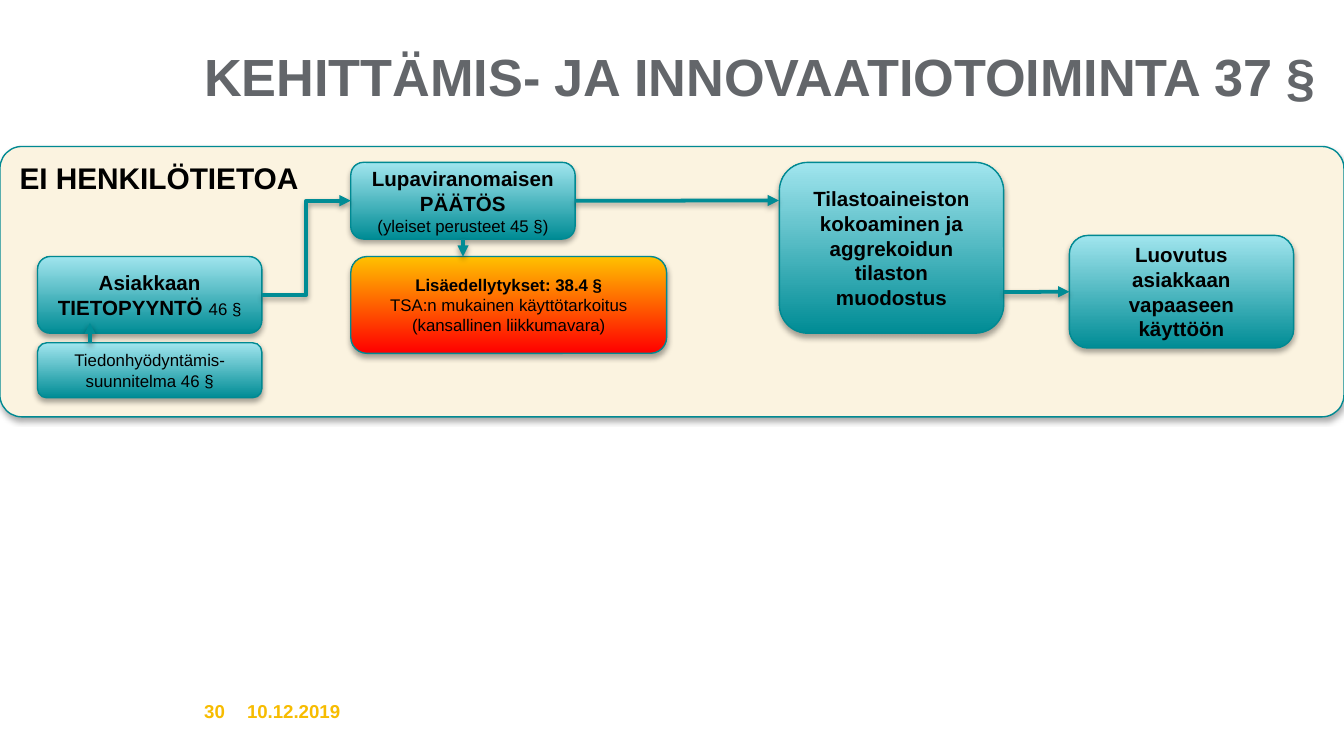
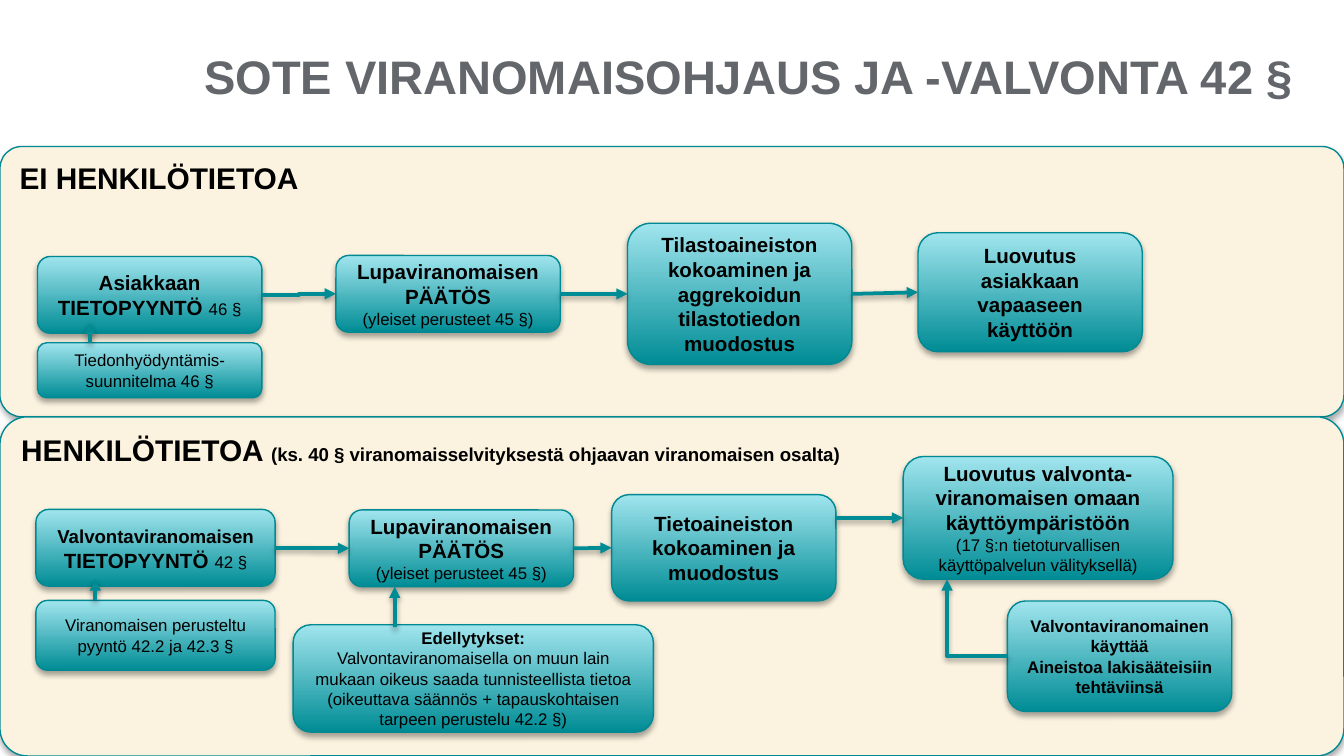
from lxml.etree import SubElement
from pptx import Presentation
from pptx.dml.color import RGBColor
from pptx.enum.shapes import MSO_CONNECTOR as LINK, MSO_SHAPE
from pptx.enum.text import MSO_ANCHOR as ANCHOR, MSO_AUTO_SIZE, PP_ALIGN as ALIGN
from pptx.oxml.ns import qn
from pptx.util import Cm, Pt

FONT = "Arial"
BLACK = RGBColor(0x00, 0x00, 0x00)
GREY = RGBColor(0x63, 0x66, 0x6A)
GOLD = RGBColor(0xF7, 0xBC, 0x00)
CREAM = RGBColor(0xFB, 0xF3, 0xE0)
BORDER = RGBColor(0x00, 0x89, 0x92)
TEAL = RGBColor(0x00, 0x8C, 0x95)
AQUA = RGBColor(0xA1, 0xE5, 0xEE)
RED = RGBColor(0xFF, 0x00, 0x00)
AMBER = RGBColor(0xFF, 0xC0, 0x00)

TOP, LEFT, BOTTOM, RIGHT = range(4)
WIDTH, HEIGHT = 25.4, 14.29
BOX_W, BOX_H = 4.24, 1.45
PANEL_TOP, PANEL_SPLIT = 2.77, 7.88


def strong(text, size=11):
    return [(text, size, True)]


def plain(text):
    return [(text, 9, False)]


OPEN_PANEL = (PANEL_TOP, PANEL_SPLIT, strong("EI HENKILÖTIETOA", 16))
PERSONAL_PANEL = (
    PANEL_SPLIT, HEIGHT,
    strong("HENKILÖTIETOA ", 16)
    + strong("(ks. 40 § viranomaisselvityksestä ohjaavan viranomaisen osalta)", 10),
)
DECISION = [strong("Lupaviranomaisen\nPÄÄTÖS"), plain("(yleiset perusteet 45 §)")]
RELEASE = [strong("Luovutus asiakkaan vapaaseen käyttöön")]
CUSTOMER = {
    "request": ((0.71, 4.85, BOX_W, BOX_H),
                [strong("Asiakkaan TIETOPYYNTÖ ") + plain("46 §")]),
    "plan": ((0.71, 6.48, BOX_W, 1.04),
             [plain("Tiedonhyödyntämis- suunnitelma 46 §")]),
}
PLAN_ARROW = ((1.7, 6.48), (1.7, 6.1), LINK.STRAIGHT)

SLIDES = [
    {
        "title": "KEHITTÄMIS- JA INNOVAATIOTOIMINTA 37 §",
        "title_size": 28,
        "footer": [("30", 3.86, 0.74), ("10.12.2019", 4.67, 3.1)],
        "panels": [OPEN_PANEL],
        "boxes": CUSTOMER | {
            "decision": ((6.63, 3.07, BOX_W, BOX_H), DECISION),
            "conditions": ((6.63, 4.85, 5.97, 1.83),
                           [strong("Lisäedellytykset: 38.4 §\n", 9)
                            + plain("TSA:n mukainen käyttötarkoitus (kansallinen liikkumavara)")]),
            "statistics": ((14.73, 3.07, BOX_W, 3.23),
                           [strong("Tilastoaineiston kokoaminen ja aggrekoidun tilaston muodostus")]),
            "release": ((20.21, 4.45, BOX_W, 2.13), RELEASE),
        },
        "arrows": [
            (("request", RIGHT), ("decision", LEFT), LINK.ELBOW),
            (("decision", RIGHT), (14.72, 3.79), LINK.STRAIGHT),
            (("decision", BOTTOM), (8.75, 4.85), LINK.STRAIGHT),
            ((18.97, 5.52), ("release", LEFT), LINK.STRAIGHT),
            PLAN_ARROW,
        ],
    },
    {
        "title": "SOTE VIRANOMAISOHJAUS JA -VALVONTA 42 §",
        "title_size": 25.2,
        "footer": [],
        "panels": [OPEN_PANEL, PERSONAL_PANEL],
        "boxes": CUSTOMER | {
            "decision": ((6.35, 4.83, BOX_W, BOX_H), DECISION),
            "statistics": ((11.86, 4.22, BOX_W, 2.67),
                           [strong("Tilastoaineiston kokoaminen ja aggrekoidun tilastotiedon muodostus")]),
            "release": ((17.35, 4.4, BOX_W, 2.25), RELEASE),
            "authority request": ((0.68, 9.63, 4.52, BOX_H),
                                  [strong("Valvontaviranomaisen", 10) + strong(" TIETOPYYNTÖ ")
                                   + plain("42 §")]),
            "grounds": ((0.68, 11.35, 4.52, 1.32),
                        [plain("Viranomaisen perusteltu pyyntö 42.2 ja 42.3 §")]),
            "authority decision": ((6.6, 9.64, BOX_W, BOX_H), DECISION),
            "requirements": ((5.54, 11.81, 6.81, 2.03),
                             [strong("Edellytykset:", 9),
                              plain("Valvontaviranomaisella on muun lain mukaan oikeus saada "
                                    "tunnisteellista tietoa (oikeuttava säännös + "
                                    "tapauskohtaisen tarpeen perustelu 42.2 §)")]),
            "collection": ((11.56, 9.35, BOX_W, 2.01),
                           [strong("Tietoaineiston kokoaminen ja muodostus")]),
            "handover": ((17.07, 8.63, 5.1, 2.32),
                         [strong("Luovutus valvonta-viranomaisen omaan käyttöympäristöön"),
                          plain("(17 §:n tietoturvallisen käyttöpalvelun välityksellä)")]),
            "use": ((19.04, 11.36, BOX_W, 2.09),
                    [strong("Valvontaviranomainen", 9), strong("käyttää", 9),
                     strong("Aineistoa lakisääteisiin tehtäviinsä", 9)]),
        },
        "arrows": [
            (("request", RIGHT), ("decision", LEFT), LINK.ELBOW),
            (("decision", RIGHT), ("statistics", LEFT), LINK.STRAIGHT),
            (("statistics", RIGHT), ("release", LEFT), LINK.STRAIGHT),
            PLAN_ARROW,
            (("authority request", RIGHT), ("authority decision", LEFT), LINK.ELBOW),
            (("authority decision", RIGHT), ("collection", LEFT), LINK.STRAIGHT),
            ((15.8, 9.79), ("handover", LEFT), LINK.STRAIGHT),
            ((1.8, 11.34), (1.8, 10.95), LINK.STRAIGHT),
            ((7.46, 11.86), (7.46, 11.09), LINK.STRAIGHT),
            (("use", LEFT), (17.9, 10.95), LINK.ELBOW),
        ],
    },
]


def style(font, size=None, bold=None, color=None):
    if size:
        font.size = Pt(size)
    if bold is not None:
        font.bold = bold
    if color is not None:
        font.name = FONT
        font.color.rgb = color


def write(frame, paragraphs, align, color=BLACK):
    for index, runs in enumerate(paragraphs):
        paragraph = frame.add_paragraph() if index else frame.paragraphs[0]
        paragraph.alignment = align
        sizes = {size for _, size, _ in runs}
        weights = {bold for _, _, bold in runs}
        shared_size = sizes.pop() if len(sizes) == 1 else None
        shared_weight = weights.pop() if len(weights) == 1 else None
        style(paragraph.font, shared_size, shared_weight, color)
        for text, size, bold in runs:
            for number, line in enumerate(text.split("\n")):
                if number:
                    paragraph.add_line_break()
                if line:
                    run = paragraph.add_run()
                    run.text = line
                    style(run.font, None if shared_size else size,
                          bold if shared_weight is None else None)


def add_shadow(part, distance, alpha):
    effects = SubElement(part._element.spPr, qn("a:effectLst"))
    shadow = SubElement(effects, qn("a:outerShdw"), blurRad="40000", dist=str(distance),
                        dir="5400000", rotWithShape="0")
    color = SubElement(shadow, qn("a:srgbClr"), val=str(BLACK))
    SubElement(color, qn("a:alpha"), val=str(alpha * 1000))


def add_rounded(slide, place):
    rounded = slide.shapes.add_shape(MSO_SHAPE.ROUNDED_RECTANGLE, *map(Cm, place))
    rounded.line.color.rgb = BORDER
    rounded.line.width = Pt(0.75)
    return rounded


def add_panel(slide, top, bottom, heading):
    panel = add_rounded(slide, (0, top, WIDTH, bottom - top))
    panel.adjustments[0] = 0.081
    panel.fill.solid()
    panel.fill.fore_color.rgb = CREAM
    add_shadow(panel, 23000, 35)
    panel.text_frame.vertical_anchor = ANCHOR.TOP
    write(panel.text_frame, [heading], ALIGN.LEFT)


def add_box(slide, place, paragraphs, colors):
    box = add_rounded(slide, place)
    box.fill.gradient()
    box.fill.gradient_angle = 90
    for stop, color in zip(box.fill.gradient_stops, colors):
        stop.color.rgb = color
    add_shadow(box, 23000, 35)
    box.text_frame.vertical_anchor = ANCHOR.MIDDLE
    write(box.text_frame, paragraphs, ALIGN.CENTER)
    return box


def locate(end, places):
    if end[0] not in places:
        return end
    left, top, width, height = places[end[0]][0]
    across, down = {TOP: (0.5, 0), LEFT: (0, 0.5), BOTTOM: (0.5, 1), RIGHT: (1, 0.5)}[end[1]]
    return left + across * width, top + down * height


def add_arrow(slide, start, end, kind, places, boxes):
    points = locate(start, places) + locate(end, places)
    arrow = slide.shapes.add_connector(kind, *map(Cm, points))
    if start[0] in boxes:
        arrow.begin_connect(boxes[start[0]], start[1])
    if end[0] in boxes:
        arrow.end_connect(boxes[end[0]], end[1])
    elif kind == LINK.ELBOW:
        arrow._element.spPr.find(qn("a:prstGeom")).set("prst", "bentConnector2")
    arrow.line.color.rgb = TEAL
    arrow.line.width = Pt(2)
    SubElement(arrow.line._get_or_add_ln(), qn("a:tailEnd"), type="triangle")
    add_shadow(arrow, 20000, 38)


def add_title(slide, text, size):
    title = slide.shapes.title
    title.left, title.top, title.width, title.height = map(Cm, (3.86, 0.23, 21.13, 2.39))
    frame = title.text_frame
    frame.auto_size = MSO_AUTO_SIZE.NONE
    frame.vertical_anchor = ANCHOR.MIDDLE
    frame.margin_left = frame.margin_right = 0
    write(frame, [strong(text, size)], ALIGN.LEFT, GREY)


def add_footer(slide, text, left, width):
    footer = slide.shapes.add_textbox(*map(Cm, (left, 13.23, width, 1.04)))
    frame = footer.text_frame
    frame.word_wrap = True
    frame.margin_left = frame.margin_right = frame.margin_top = frame.margin_bottom = 0
    write(frame, [strong(text, 10)], ALIGN.LEFT, GOLD)


def main():
    deck = Presentation()
    deck.slide_width, deck.slide_height = Cm(WIDTH), Cm(HEIGHT)
    for content in SLIDES:
        slide = deck.slides.add_slide(deck.slide_layouts[5])
        add_title(slide, content["title"], content["title_size"])
        for item in content["footer"]:
            add_footer(slide, *item)
        for panel in content["panels"]:
            add_panel(slide, *panel)
        boxes = {}
        for key, (place, paragraphs) in content["boxes"].items():
            colors = (RED, AMBER) if key == "conditions" else (TEAL, AQUA)
            boxes[key] = add_box(slide, place, paragraphs, colors)
        for arrow in content["arrows"]:
            add_arrow(slide, *arrow, content["boxes"], boxes)
    deck.save("out.pptx")


if __name__ == "__main__":
    main()
